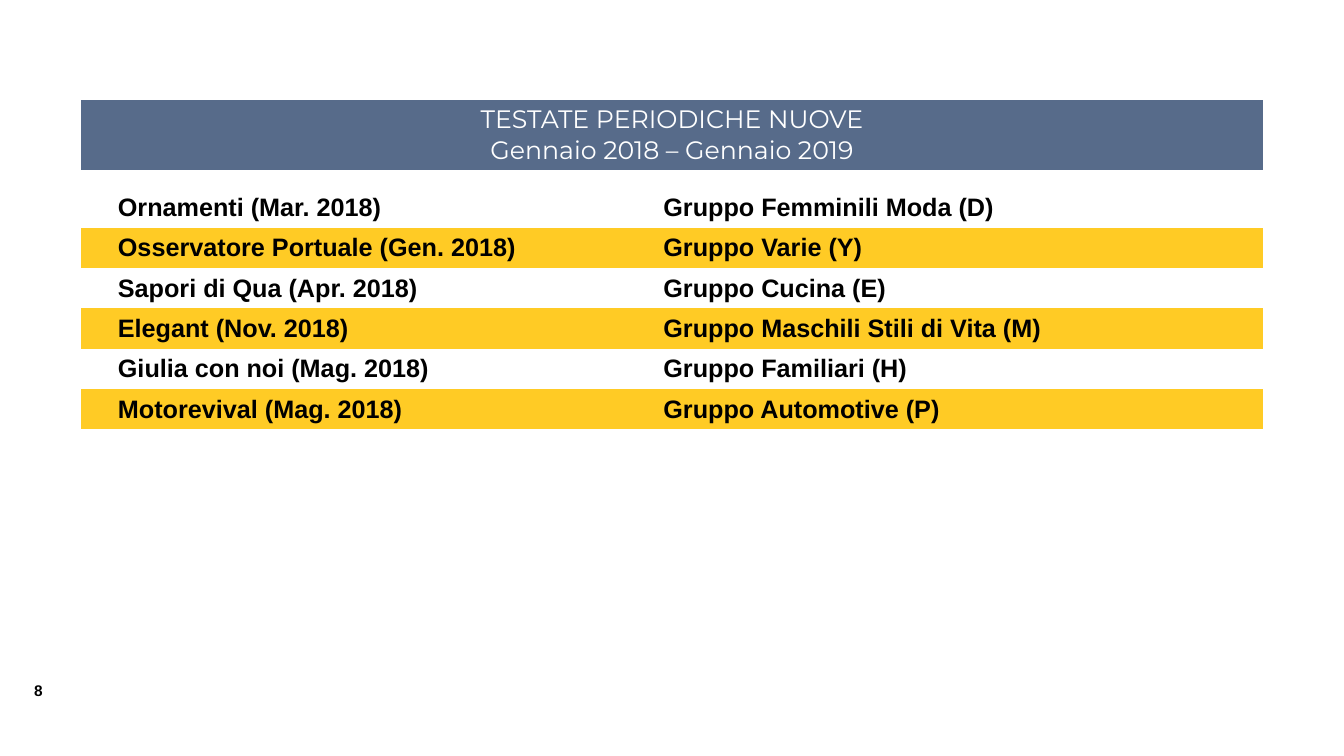
from dataclasses import dataclass
from pptx import Presentation
from pptx.dml.color import RGBColor
from pptx.enum.text import MSO_ANCHOR, PP_ALIGN
from pptx.util import Inches, Pt


@dataclass
class Theme:
    slate: RGBColor = RGBColor(0x57, 0x6B, 0x8A)
    yellow: RGBColor = RGBColor(0xFF, 0xCB, 0x25)
    white: RGBColor = RGBColor(0xFF, 0xFF, 0xFF)
    black: RGBColor = RGBColor(0, 0, 0)
    body_size: Pt = Pt(18)
    page_size: Pt = Pt(11)
    gap_size: Pt = Pt(4)
    head_font: str = "Montserrat"
    body_font: str = "Arial"
    no_grid: str = "{2D5ABB26-0587-4C30-8999-92F81FD0307C}"


theme = Theme()


def add_run(p, text, size, font, color, bold):
    r = p.add_run()
    r.text = text
    r.font.size, r.font.name, r.font.bold = size, font, bold
    r.font.color.rgb = color


def fill_cell(cell, color):
    cell.fill.solid()
    cell.fill.fore_color.rgb = color


prs = Presentation()
prs.slide_width, prs.slide_height = Inches(13.33), Inches(7.5)
s = prs.slides.add_slide(prs.slide_layouts[6])

# Content
title = ["TESTATE PERIODICHE NUOVE", "Gennaio 2018 – Gennaio 2019"]
magazines = [
    ("Ornamenti (Mar. 2018)", "Gruppo Femminili Moda (D)"),
    ("Osservatore Portuale (Gen. 2018)", "Gruppo Varie (Y)"),
    ("Sapori di Qua (Apr. 2018)", "Gruppo Cucina (E)"),
    ("Elegant (Nov. 2018)", "Gruppo Maschili Stili di Vita (M)"),
    ("Giulia con noi (Mag. 2018)", "Gruppo Familiari (H)"),
    ("Motorevival (Mag. 2018)", "Gruppo Automotive (P)"),
]
heights = [0.7, 0.17] + [0.4] * len(magazines) + [0.36] * 4

# Table frame
frame = s.shapes.add_table(len(heights), 2, Inches(0.8), Inches(0.99),
                           Inches(11.73), Inches(sum(heights)))
table = frame.table
table.first_row = table.horz_banding = False
table._tbl.tblPr.find("{*}tableStyleId").text = theme.no_grid
for col, width in zip(table.columns, (5.7, 6.03)):
    col.width = Inches(width)
for row, height in zip(table.rows, heights):
    row.height = Inches(height)

# Header across both columns
head = table.cell(0, 0)
head.merge(table.cell(0, 1))
fill_cell(head, theme.slate)
head.vertical_anchor = MSO_ANCHOR.MIDDLE
head.margin_top = head.margin_bottom = Inches(0.04)
tf = head.text_frame
for i, line in enumerate(title):
    p = tf.add_paragraph() if i else tf.paragraphs[0]
    p.alignment = PP_ALIGN.CENTER
    add_run(p, line, theme.body_size, theme.head_font, theme.white, False)

# Thin gap below the header
for cell in table.rows[1].cells:
    cell.fill.background()
    cell.margin_top = cell.margin_bottom = 0
    end = cell.text_frame.paragraphs[0]._p.get_or_add_endParaRPr()
    end.set("sz", str(int(theme.gap_size.pt * 100)))

# Magazine rows, every second one yellow
for i, texts in enumerate(magazines):
    for j, (text, indent) in enumerate(zip(texts, (0.37, 0.08))):
        cell = table.cell(i + 2, j)
        if i % 2:
            fill_cell(cell, theme.yellow)
        else:
            cell.fill.background()
        cell.vertical_anchor = MSO_ANCHOR.MIDDLE
        cell.margin_left = Inches(indent)
        add_run(cell.text_frame.paragraphs[0], text, theme.body_size,
                theme.body_font, theme.black, True)

# Empty white rows
for i in range(len(magazines) + 2, len(heights)):
    for cell in table.rows[i].cells:
        fill_cell(cell, theme.white)
        cell.margin_top = cell.margin_bottom = Inches(0.02)

# Page number
page = s.shapes.add_textbox(Inches(0.24), Inches(6.71), Inches(0.42), Inches(0.29))
add_run(page.text_frame.paragraphs[0], "8", theme.page_size,
        theme.body_font, theme.black, True)
page.text_frame.word_wrap = True

prs.save("out.pptx")
